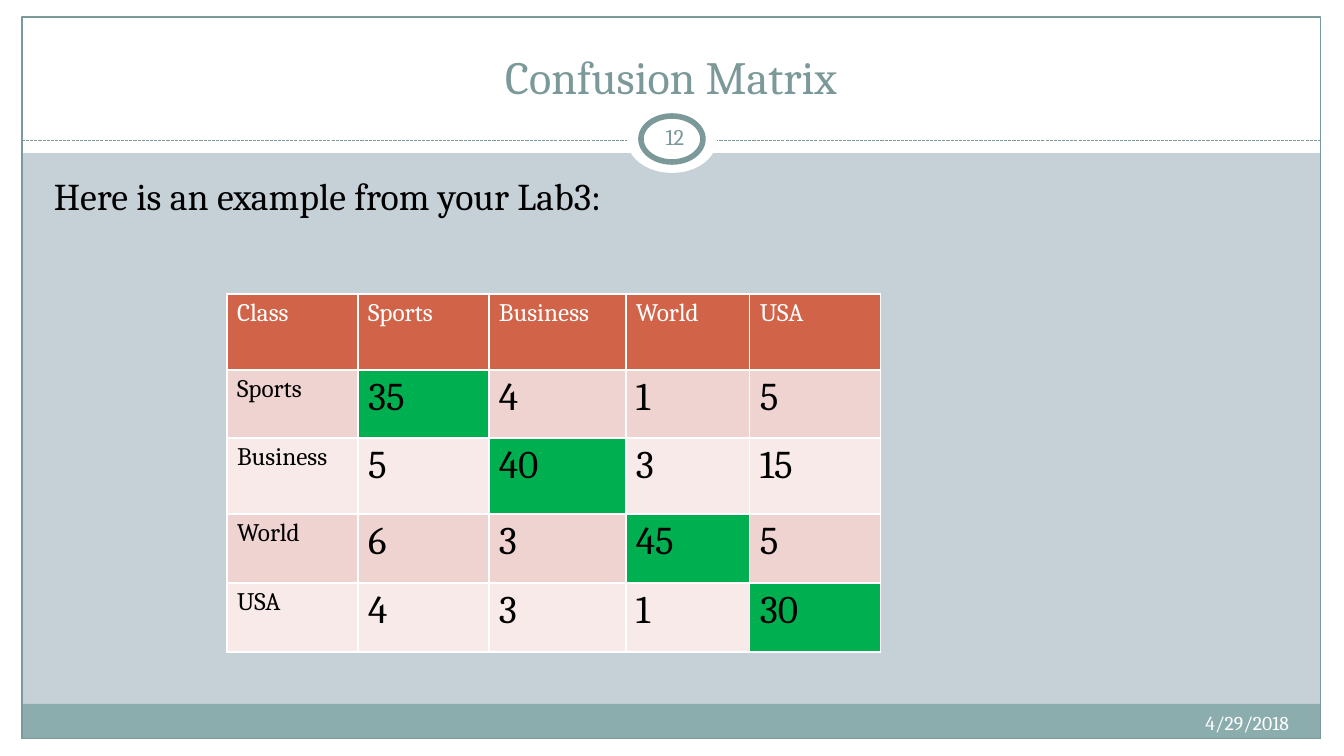
import lxml.etree
import pptx
import pptx.dml.color
import pptx.enum.dml
import pptx.enum.shapes
import pptx.enum.text
import pptx.oxml.ns
import pptx.util

FONT = "Cambria"
WHITE, BLACK, TEAL, GREEN = "FFFFFF", "000000", "7C999A", "00B050"
HEADER_FILL, BAND_FILLS = "D16349", ("EED3D0", "F7EAE9")
WIDTH, HEIGHT = 1344, 756

# kind, (left, top, width, height), fill, line colour, line width in points
FRAME = [
    ("RECTANGLE", (0, 739, WIDTH, 17), WHITE, None, 0),
    ("RECTANGLE", (0, 0, WIDTH, 153), WHITE, None, 0),
    ("RECTANGLE", (0, 0, 22, HEIGHT), WHITE, None, 0),
    ("RECTANGLE", (1321, 0, 23, HEIGHT), WHITE, None, 0),
    ("RECTANGLE", (22, 704, 1299, 35), "8CADAE", None, 0),
    ("RECTANGLE", (22, 17, 1299, 722), None, TEAL, 0.75),
]
BADGE = [
    ("OVAL", (627, 106, 90, 67), WHITE, None, 0),
    ("OVAL", (641, 116, 62, 46), WHITE, TEAL, 4),
]
RULE = (22, 141, 1321, 141)

# text, (left, top, width, height), size, colour, alignment, anchor, space before
TEXTS = [
    ("Confusion Matrix", (44, 25, 1254, 84), 33, TEAL, "CENTER", "BOTTOM", 0),
    ("4/29/2018", (851, 706, 448, 40), 14, WHITE, "RIGHT", "TOP", 0),
    ("12", (641, 113, 68, 48), 16, TEAL, "CENTER", "MIDDLE", 0),
    ("Here is an example from your Lab3:", (44, 168, 1250, 504), 27, BLACK, "LEFT", "TOP", 5.4),
]

CLASSES = ["Sports", "Business", "World", "USA"]
COUNTS = [
    [35, 4, 1, 5],
    [5, 40, 3, 15],
    [6, 3, 45, 5],
    [4, 3, 1, 30],
]
TABLE_LEFT, TABLE_TOP = 227, 294
COLUMN_WIDTHS = [131, 131, 137, 124, 131]
ROW_HEIGHTS = [76, 68, 76, 69, 69]


def px(length):
    return pptx.util.Emu(round(length * 914400 / 100.8))


def color(value):
    return pptx.dml.color.RGBColor.from_string(value)


def paint(fill, value):
    if value:
        fill.solid()
        fill.fore_color.rgb = color(value)
    else:
        fill.background()


def style(para, size, value):
    para.font.name = FONT
    para.font.size = pptx.util.Pt(size)
    para.font.color.rgb = color(value)


def add_shapes(page, items):
    for kind, box, fill, line, width in items:
        preset = getattr(pptx.enum.shapes.MSO_SHAPE, kind)
        shape = page.shapes.add_shape(preset, *map(px, box))
        shape.shadow.inherit = False
        paint(shape.fill, fill)
        paint(shape.line.fill, line)
        if line:
            shape.line.width = pptx.util.Pt(width)


def add_rule(page):
    rule = page.shapes.add_connector(pptx.enum.shapes.MSO_CONNECTOR.STRAIGHT, *map(px, RULE))
    rule.line.color.rgb = color(TEAL)
    rule.line.width = pptx.util.Pt(0.75)
    rule.line.dash_style = pptx.enum.dml.MSO_LINE.SQUARE_DOT
    lxml.etree.SubElement(rule._element.spPr, pptx.oxml.ns.qn("a:effectLst"))


def add_text(page, text, box, size, value, align, anchor, before):
    frame = page.shapes.add_textbox(*map(px, box)).text_frame
    frame.word_wrap = True
    frame.vertical_anchor = getattr(pptx.enum.text.MSO_ANCHOR, anchor)
    para = frame.paragraphs[0]
    para.text = text
    para.alignment = getattr(pptx.enum.text.PP_ALIGN, align)
    para.space_before = pptx.util.Pt(before)
    style(para, size, value)
    return frame


def add_borders(cell):
    properties = cell._tc.get_or_add_tcPr()
    for side in ("lnL", "lnR", "lnT", "lnB"):
        line = lxml.etree.SubElement(properties, pptx.oxml.ns.qn("a:" + side), w="12700")
        fill = lxml.etree.SubElement(line, pptx.oxml.ns.qn("a:solidFill"))
        lxml.etree.SubElement(fill, pptx.oxml.ns.qn("a:srgbClr"), val=WHITE)


def add_matrix(page):
    rows = [["Class"] + CLASSES] + [[name] + counts for name, counts in zip(CLASSES, COUNTS)]
    box = (TABLE_LEFT, TABLE_TOP, sum(COLUMN_WIDTHS), sum(ROW_HEIGHTS))
    table = page.shapes.add_table(len(rows), len(rows[0]), *map(px, box)).table
    for column, width in zip(table.columns, COLUMN_WIDTHS):
        column.width = px(width)
    for row, height in zip(table.rows, ROW_HEIGHTS):
        row.height = px(height)
    for r, values in enumerate(rows):
        for c, value in enumerate(values):
            cell = table.cell(r, c)
            para = cell.text_frame.paragraphs[0]
            para.text = str(value)
            style(para, 28 if r and c else 18, BLACK if r else WHITE)
            add_borders(cell)
            if r == 0:
                fill = HEADER_FILL
            elif r == c:
                fill = GREEN
            else:
                fill = BAND_FILLS[(r - 1) % 2]
            paint(cell.fill, fill)


def main():
    deck = pptx.Presentation()
    deck.slide_width, deck.slide_height = px(WIDTH), px(HEIGHT)
    page = deck.slides.add_slide(deck.slide_layouts[6])
    paint(page.background.fill, "C5D1D7")
    add_shapes(page, FRAME)
    add_rule(page)
    add_shapes(page, BADGE)
    for item in TEXTS:
        frame = add_text(page, *item)
        if item[0] == "12":
            frame.margin_left = frame.margin_right = px(5)
    add_matrix(page)
    deck.save("out.pptx")


if __name__ == "__main__":
    main()
